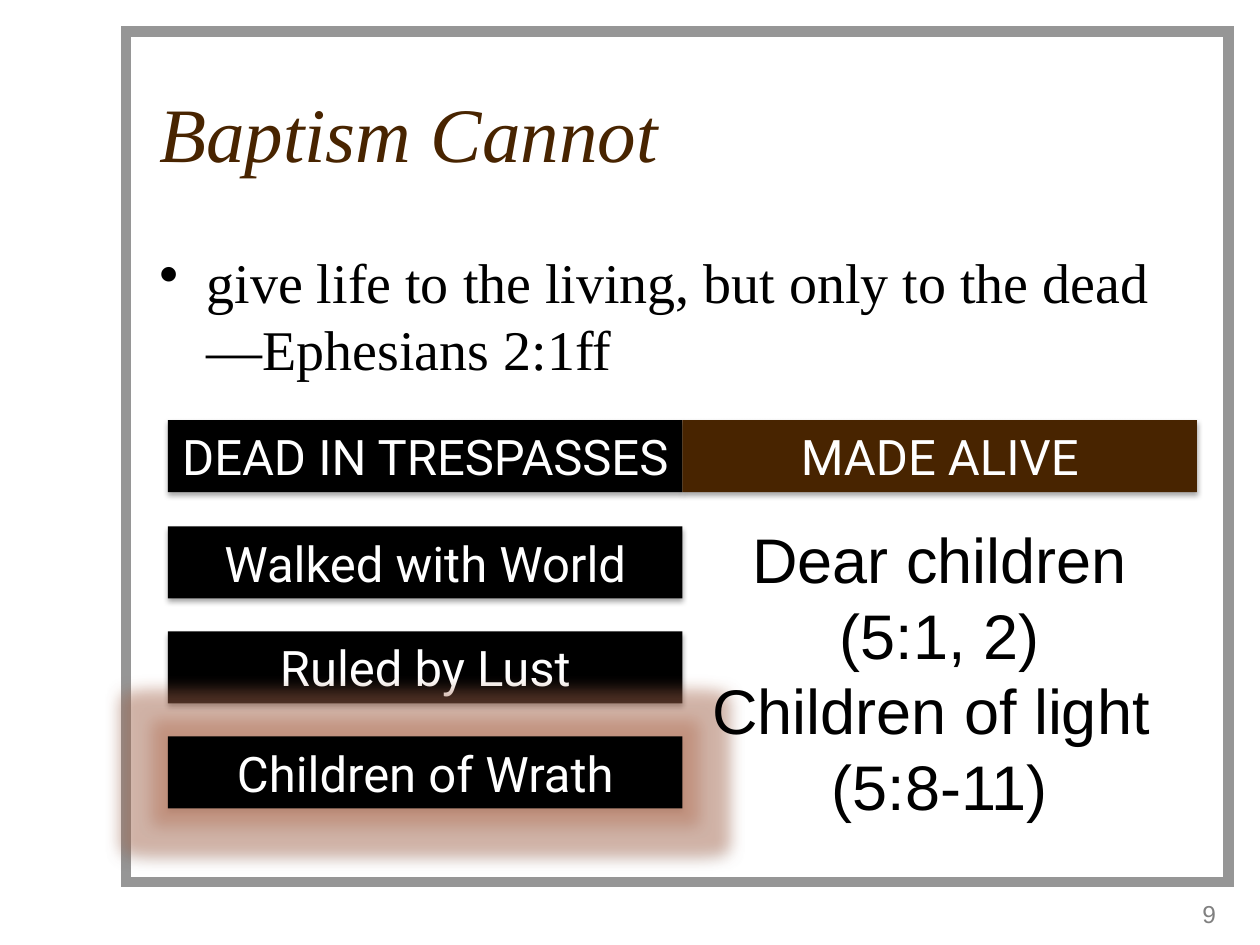
from dataclasses import dataclass
from lxml import etree
from pptx import Presentation
from pptx.dml.color import RGBColor as RGB
from pptx.enum.shapes import MSO_SHAPE as Kind
from pptx.enum.text import MSO_ANCHOR as Anchor, PP_ALIGN as Align
from pptx.oxml import parse_xml
from pptx.oxml.ns import nsdecls, qn
from pptx.util import Emu, Pt


@dataclass(frozen=True)
class Theme:
    black: str = "000000"
    white: str = "FFFFFF"
    brown: str = "482400"
    gray: str = "969696"
    muted: str = "808080"
    glow: str = "C07658"
    serif: str = "Times New Roman"
    sans: str = "Arial"
    label: str = "Roboto"
    title: int = 44
    large: int = 36
    body: int = 32
    bar: int = 28
    small: int = 14


look = Theme()
PX = 9525  # 96 px to the inch


def write(shape, lines, face, size, color, align=Align.LEFT,
          anchor=Anchor.TOP, bullet=None):
    frame = shape.text_frame
    frame.word_wrap = True
    frame.vertical_anchor = anchor
    frame.text = "\n".join(lines)
    for para in frame.paragraphs:
        para.alignment = align
        if bullet:
            props = para._p.get_or_add_pPr()
            props.set("marL", str(36 * PX))
            props.set("indent", str(-36 * PX))
            etree.SubElement(props, qn("a:buChar")).set("char", bullet)
        font = para.font
        font.name, font.size = face, Pt(size)
        font.color.rgb = RGB.from_string(color)
    return frame.paragraphs


def place(x, y, w, h, fill=None):
    box = [Emu(n * PX) for n in (x, y, w, h)]
    if fill is None:
        return slide.shapes.add_textbox(*box)
    shape = slide.shapes.add_shape(Kind.RECTANGLE, *box)
    shape.shadow.inherit = False
    shape.fill.solid()
    shape.fill.fore_color.rgb = RGB.from_string(fill)
    shape.line.fill.background()
    return shape


deck = Presentation()
deck.slide_width, deck.slide_height = Emu(960 * PX), Emu(720 * PX)
slide = deck.slides.add_slide(deck.slide_layouts[6])

# Frame with square corners, and page number
edge = place(96, 24, 840, 648, look.white)
edge.line.color.rgb = RGB.from_string(look.gray)
edge.line.width = Pt(6)
rim = edge._element.spPr.find(qn("a:ln"))
etree.SubElement(rim, qn("a:miter")).set("lim", "800000")
write(place(736, 672, 200, 48), ["9"], look.sans, look.small, look.muted,
      Align.RIGHT, Anchor.MIDDLE)

# Title
head = write(place(112, 40, 816, 120), ["Baptism Cannot"], look.serif,
             look.title, look.brown, anchor=Anchor.MIDDLE)
head[0].font.italic = True

# Bullet
write(place(112, 184, 816, 120),
      ["give life to the living, but only to the dead—Ephesians 2:1ff"],
      look.serif, look.body, look.black, bullet="•")

# Bars: two headings, then the left column
left, right, wide, tall = 128, 520, 392, 55
bars = [("DEAD IN TRESPASSES", left, 320, look.black),
        ("MADE ALIVE", right, 320, look.brown)]
names = ["Walked with World", "Ruled by Lust", "Children of Wrath"]
bars += [(name, left, 401 + 80 * i, look.black) for i, name in enumerate(names)]
for name, x, y, fill in bars:
    bar = place(x, y, wide, tall, fill)
    write(bar, [name], look.label, look.bar, look.white, Align.CENTER,
          Anchor.MIDDLE)
    effects = bar._element.spPr.find(qn("a:effectLst"))
    if name == names[-1]:
        effects.append(parse_xml(
            f'<a:glow {nsdecls("a")} rad="{24 * PX}"><a:srgbClr val="{look.glow}">'
            '<a:alpha val="40000"/></a:srgbClr></a:glow>'))
    effects.append(parse_xml(
        f'<a:outerShdw {nsdecls("a")} blurRad="{Pt(3.1)}" dist="{Pt(1.8)}" '
        f'dir="5400000" rotWithShape="0"><a:srgbClr val="{look.black}">'
        '<a:alpha val="35000"/></a:srgbClr></a:outerShdw>'))

# Right column
write(place(right, 392, wide, 184),
      ["Dear children (5:1, 2)", "Children of light \v(5:8-11)"],
      look.sans, look.large, look.black, Align.CENTER)

deck.save("out.pptx")
